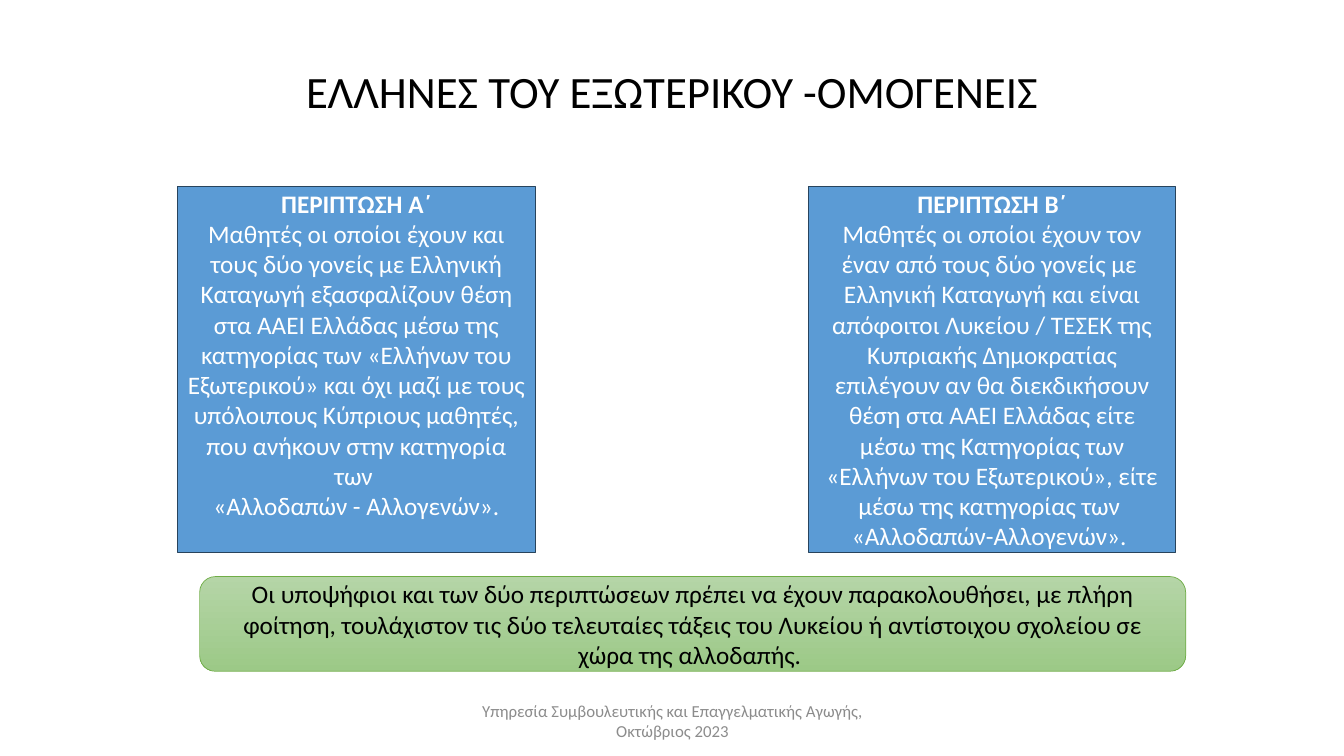
from dataclasses import dataclass

from pptx import Presentation
from pptx.dml.color import RGBColor
from pptx.enum.shapes import MSO_SHAPE as Shape
from pptx.enum.text import MSO_ANCHOR as Anchor, PP_ALIGN as Align
from pptx.util import Emu, Pt

TITLE = "ΕΛΛΗΝΕΣ ΤΟΥ ΕΞΩΤΕΡΙΚΟΥ -ΟΜΟΓΕΝΕΙΣ"
FOOTER = "Υπηρεσία Συμβουλευτικής και Επαγγελματικής Αγωγής, Οκτώβριος 2023"
NOTE = (
    "Οι υποψήφιοι και των δύο περιπτώσεων πρέπει να έχουν παρακολουθήσει, "
    "με πλήρη φοίτηση, τουλάχιστον τις δύο τελευταίες τάξεις του Λυκείου "
    "ή αντίστοιχου σχολείου σε χώρα της αλλοδαπής. "
)
# left, width, top inset, bottom inset, paragraphs
CASES = [
    (176, 355, 0, 30, [
        "ΠΕΡΙΠΤΩΣΗ Α΄",
        "Μαθητές οι οποίοι έχουν και τους δύο γονείς με Ελληνική Καταγωγή "
        "εξασφαλίζουν θέση στα ΑΑΕΙ Ελλάδας μέσω της κατηγορίας των "
        "«Ελλήνων του Εξωτερικού» και όχι μαζί με τους υπόλοιπους Κύπριους "
        "μαθητές, που ανήκουν στην κατηγορία των ",
        "«Αλλοδαπών - Αλλογενών».",
    ]),
    (802, 364, 5, 5, [
        "ΠΕΡΙΠΤΩΣΗ B΄",
        "Μαθητές οι οποίοι έχουν τον έναν από τους δύο γονείς με  Ελληνική "
        "Καταγωγή και είναι απόφοιτοι Λυκείου / ΤΕΣΕΚ της Κυπριακής "
        "Δημοκρατίας επιλέγουν αν θα διεκδικήσουν θέση στα ΑΑΕΙ Ελλάδας είτε "
        "μέσω της Κατηγορίας των «Ελλήνων του Εξωτερικού», είτε μέσω της "
        "κατηγορίας των ",
        "«Αλλοδαπών-Αλλογενών». ",
    ]),
]
CASE_TOP, CASE_HIGH = 185, 363


@dataclass(frozen=True)
class Theme:
    font: str = "Calibri"
    ink: str = "000000"
    pale: str = "FFFFFF"
    gray: str = "8C8C8C"
    blue: str = "5B9BD5"
    navy: str = "28445D"
    green: str = "70AD47"
    fade: tuple = ("B5D5A7", "9CC987")
    title: int = 32
    body: int = 18
    foot: int = 12


THEME = Theme()


def px(count):
    return Emu(count * 9144)


def rgb(code):
    return RGBColor.from_string(code)


def write(shape, lines, size, color):
    """Fill the shape with centred paragraphs and return them."""
    frame = shape.text_frame
    frame.text = "\n".join(lines)
    frame.word_wrap = True
    frame.vertical_anchor = Anchor.MIDDLE
    for para in frame.paragraphs:
        para.alignment = Align.CENTER
        for run in para.runs:
            font = run.font
            font.name, font.size = THEME.font, Pt(size)
            font.color.rgb = rgb(color)
    return frame.paragraphs


def add_text(slide, box, text, size, color):
    shape = slide.shapes.add_textbox(*map(px, box))
    return write(shape, [text], size, color)


def add_panel(slide, kind, box, edge, width):
    panel = slide.shapes.add_shape(kind, *map(px, box))
    panel.shadow.inherit = False
    panel.line.color.rgb = rgb(edge)
    panel.line.width = Pt(width)
    return panel


def add_case(slide, left, width, above, below, lines):
    box = (left, CASE_TOP, width, CASE_HIGH)
    panel = add_panel(slide, Shape.RECTANGLE, box, THEME.navy, 1)
    panel.fill.solid()
    panel.fill.fore_color.rgb = rgb(THEME.blue)
    head = write(panel, lines, THEME.body, THEME.pale)[0]
    head.runs[0].font.bold = True
    panel.text_frame.margin_top = px(above)
    panel.text_frame.margin_bottom = px(below)


def add_note(slide):
    box = (198, 572, 978, 94)
    panel = add_panel(slide, Shape.ROUNDED_RECTANGLE, box, THEME.green, 0.5)
    panel.fill.gradient()
    panel.fill.gradient_angle = 270
    for stop, code in zip(panel.fill.gradient_stops, THEME.fade):
        stop.color.rgb = rgb(code)
    write(panel, [NOTE], THEME.body, THEME.ink)


def main():
    deck = Presentation()
    deck.slide_width, deck.slide_height = px(1333), px(750)
    slide = deck.slides.add_slide(deck.slide_layouts[6])
    title = add_text(slide, (92, 21, 1150, 145), TITLE, THEME.title, THEME.ink)
    title[0].line_spacing = 0.9
    add_text(slide, (442, 695, 450, 40), FOOTER, THEME.foot, THEME.gray)
    for case in CASES:
        add_case(slide, *case)
    add_note(slide)
    deck.save("out.pptx")


if __name__ == "__main__":
    main()
